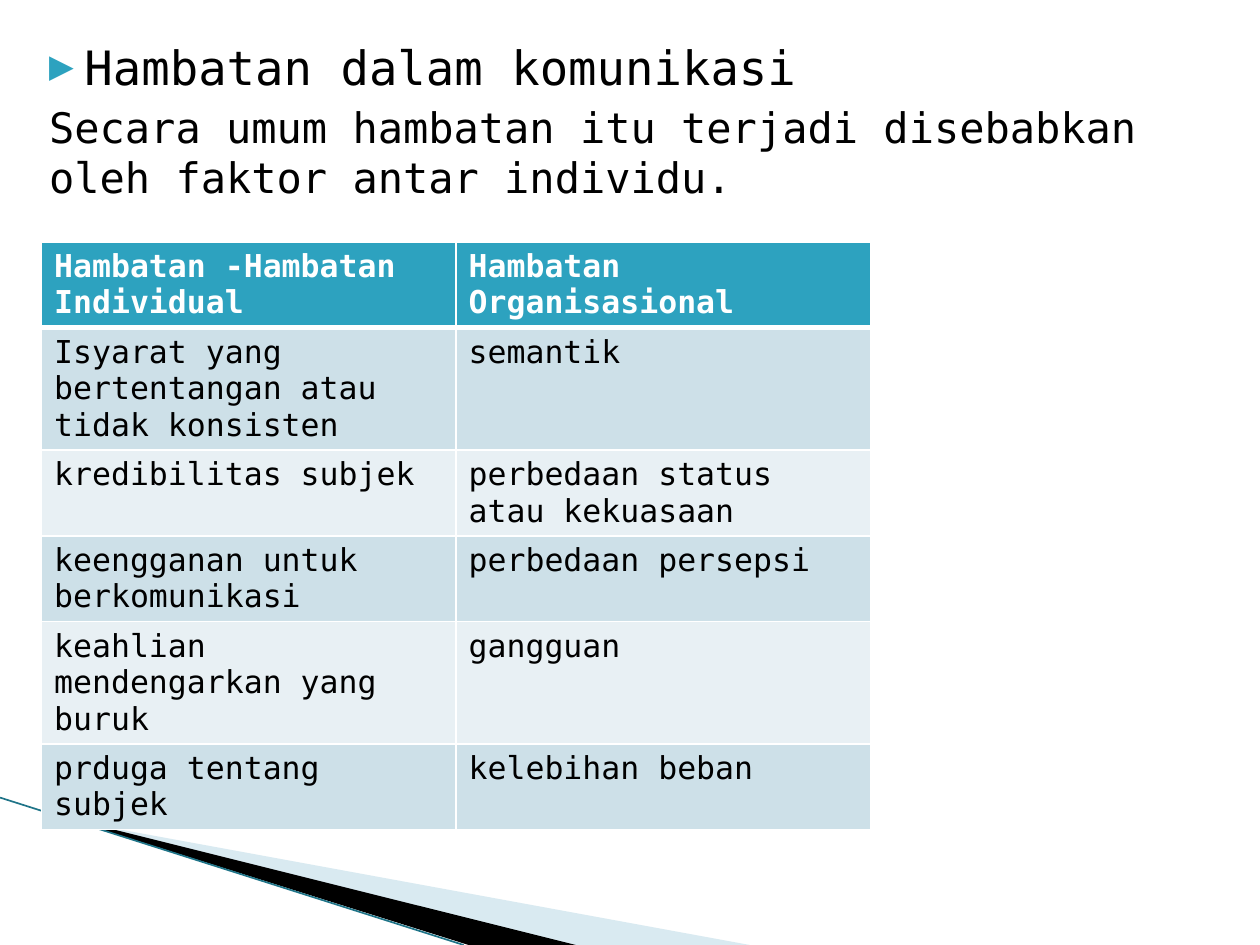
"""Build a slide on barriers to communication."""
import pptx
import pptx.dml.color
import pptx.enum.text
import pptx.oxml
import pptx.oxml.ns
import pptx.util

COLORS = {
    "white": "FFFFFF",
    "black": "000000",
    "accent": "2DA2BF",
    "pale": "A0CBDC",
    "edge": "1F7488",
    "odd": "CDE0E8",
    "even": "E8F0F4",
}
ROWS = [
    ("Hambatan -Hambatan Individual", "Hambatan Organisasional"),
    ("Isyarat yang bertentangan atau tidak konsisten", "semantik"),
    ("kredibilitas subjek", "perbedaan status atau kekuasaan"),
    ("keengganan untuk berkomunikasi", "perbedaan persepsi"),
    ("keahlian mendengarkan yang buruk", "gangguan"),
    ("prduga tentang subjek", "kelebihan beban"),
]
ROW_HEIGHTS = [5.7, 8.1, 5.7, 5.7, 5.7, 3.3]


class SlideBuilder:
    """Hold the style and the current slide; lengths are in a 100 by 75 grid."""

    font = "DejaVu Sans Mono"
    columns, rows = 100, 75

    def __init__(self):
        self.deck = pptx.Presentation()
        self.deck.slide_width = pptx.util.Inches(10)
        self.deck.slide_height = pptx.util.Inches(7.5)
        self.page = self.deck.slides.add_slide(self.deck.slide_layouts[1])
        title = self.page.shapes.title
        title.element.getparent().remove(title.element)

    def x(self, column):
        return pptx.util.Emu(round(self.deck.slide_width * column / self.columns))

    def y(self, row):
        return pptx.util.Emu(round(self.deck.slide_height * row / self.rows))

    def color(self, name):
        return pptx.dml.color.RGBColor.from_string(COLORS[name])

    def add_xml(self, parent, body):
        namespace = pptx.oxml.ns.nsdecls("a")
        for element in pptx.oxml.parse_xml(f"<a:all {namespace}>{body}</a:all>"):
            parent.append(element)

    def style(self, para, size, color, bold=False):
        para.font.name = self.font
        para.font.size = pptx.util.Pt(size)
        para.font.bold = bold
        para.font.color.rgb = self.color(color)

    def wedge(self, points, color, opacity=100):
        corners = [(self.x(column), self.y(row)) for column, row in points]
        builder = self.page.shapes.build_freeform(*corners[0])
        builder.add_line_segments(corners[1:])
        shape = builder.convert_to_shape()
        shape.shadow.inherit = False
        shape.line.fill.background()
        shape.fill.solid()
        shape.fill.fore_color.rgb = self.color(color)
        if opacity < 100:
            fill = shape.element.spPr.find(pptx.oxml.ns.qn("a:solidFill"))
            self.add_xml(fill[0], f'<a:alpha val="{opacity * 1000}"/>')

    def line(self, start, end, color, width):
        line = self.page.shapes.add_connector(
            1, self.x(start[0]), self.y(start[1]), self.x(end[0]), self.y(end[1]))
        line.line.color.rgb = self.color(color)
        line.line.width = pptx.util.Pt(width)
        self.add_xml(line._element.spPr, "<a:effectLst/>")

    def body(self, left, top, width, height, heading, text):
        box = self.page.placeholders[1]
        box.left, box.top = self.x(left), self.y(top)
        box.width, box.height = self.x(width), self.y(height)
        self.page.shapes._spTree.append(box.element)
        frame = box.text_frame
        frame.auto_size = pptx.enum.text.MSO_AUTO_SIZE.NONE
        frame.vertical_anchor = pptx.enum.text.MSO_ANCHOR.TOP
        bullet = (f'<a:buClr><a:srgbClr val="{COLORS["accent"]}"/></a:buClr>'
                  '<a:buSzPct val="68000"/><a:buFont typeface="DejaVu Sans"/>'
                  '<a:buChar char="▶"/>')
        items = [(heading, 27, 4, -2.8, 0, bullet),
                 (text, 24, 1.2, 0, 4, "<a:buNone/>")]
        for number, (words, size, margin, indent, space, marker) in enumerate(items):
            para = frame.add_paragraph() if number else frame.paragraphs[0]
            para.text = words
            properties = para._p.get_or_add_pPr()
            properties.set("marL", str(self.x(margin)))
            properties.set("indent", str(self.x(indent)))
            self.add_xml(properties, marker)
            para.space_before = pptx.util.Pt(space)
            self.style(para, size, "black")

    def borders(self, cell, top, bottom):
        for side, width in (("L", 1), ("R", 1), ("T", top), ("B", bottom)):
            self.add_xml(
                cell._tc.get_or_add_tcPr(),
                f'<a:ln{side} w="{pptx.util.Pt(width)}"><a:solidFill>'
                f'<a:srgbClr val="{COLORS["white"]}"/></a:solidFill></a:ln{side}>')

    def table(self, left, top, width, height, rows, heights):
        table = self.page.shapes.add_table(
            len(rows), len(rows[0]), self.x(left), self.y(top),
            self.x(width), self.y(height)).table
        for number, (texts, row_height) in enumerate(zip(rows, heights)):
            table.rows[number].height = self.y(row_height)
            header = number == 0
            fill = "accent" if header else ("even", "odd")[number % 2]
            for column, words in enumerate(texts):
                cell = table.cell(number, column)
                cell.text = words
                self.style(cell.text_frame.paragraphs[0], 18,
                           "white" if header else "black", header)
                self.borders(cell, 3 if number == 1 else 1, 3 if header else 1)
                cell.fill.solid()
                cell.fill.fore_color.rgb = self.color(fill)


def main():
    slide = SlideBuilder()
    slide.wedge([(5.5, 65.1), (59.5, 75), (45.6, 75), (5.5, 65)], "pale", 40)
    slide.wedge([(5.3, 64.9), (45.7, 75), (37.2, 75), (5.4, 65)], "black")
    slide.line((0, 63.3), (36.8, 75), "edge", 0.95)
    slide.body(1.7, 2.5, 93.3, 63.2, "Hambatan dalam komunikasi",
               "Secara umum hambatan itu terjadi disebabkan oleh faktor antar individu.")
    slide.table(3.3, 19.2, 65.8, 42, ROWS, ROW_HEIGHTS)
    slide.deck.save("out.pptx")


if __name__ == "__main__":
    main()
